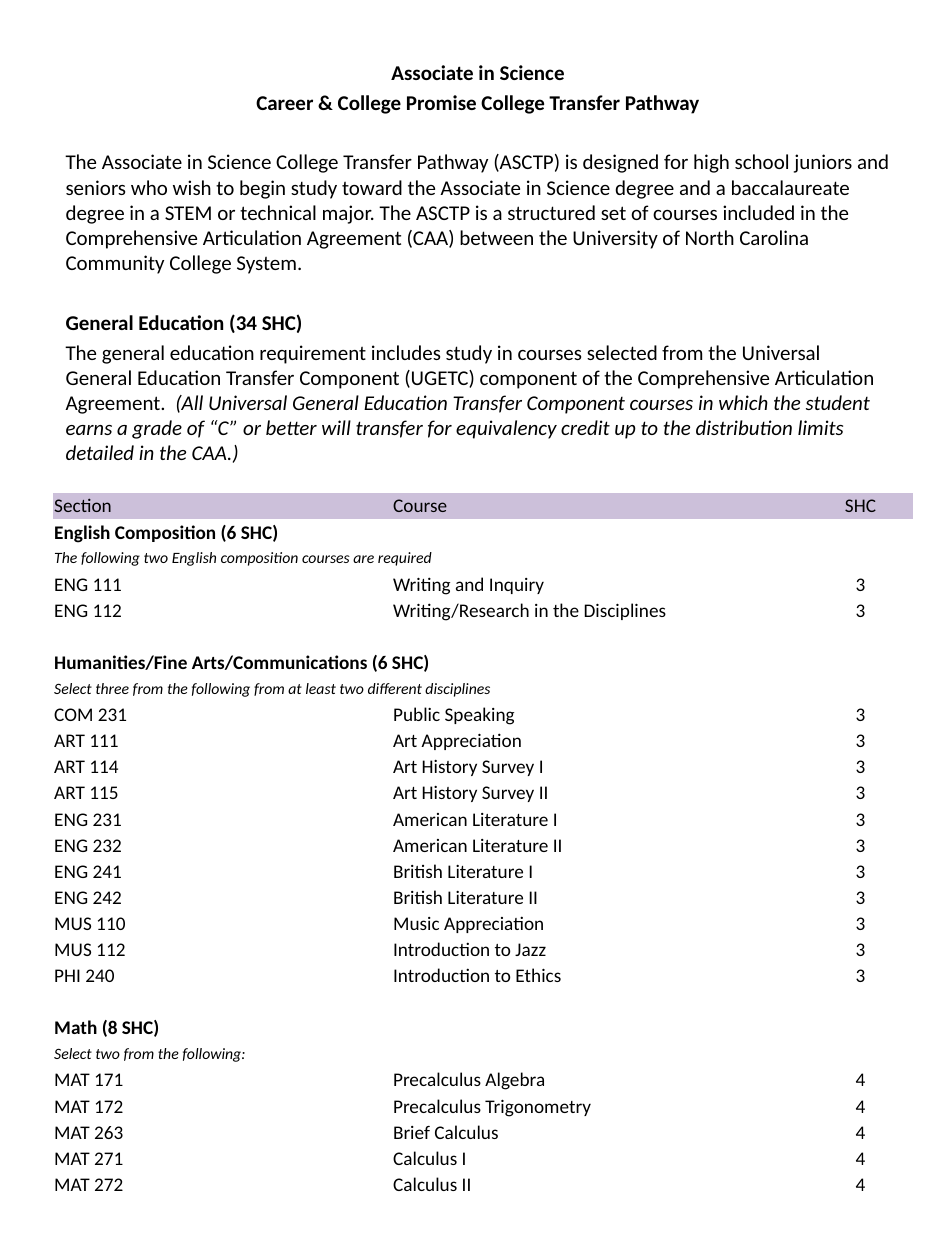
"""Build the Associate in Science pathway sheet."""
import dataclasses

import pptx
import pptx.dml.color
import pptx.enum.text
import pptx.oxml
import pptx.oxml.ns
import pptx.table
import pptx.util

ALIGN = pptx.enum.text.PP_ALIGN
WIDE, HIGH = 7.5, 10
LEFT = 0.056 * WIDE
COLS = (2.69, 3.3, 0.84)
TABLE_TOP, TABLE_HIGH = 0.391 * HIGH, 0.56 * HIGH
NO_GRID = "{2D5ABB26-0587-4C30-8999-92F81FD0307C}"
NEAR, FAR = 2.8, 19.6


@dataclasses.dataclass
class Para:
    """A paragraph of the introduction."""

    text: str
    bold: bool = False
    mid: bool = False
    gap: float = NEAR
    tail: str = ""


@dataclasses.dataclass
class Group:
    """A section of the course table."""

    name: str
    rule: str
    hours: str
    spans: tuple[int, int]
    items: list[tuple[str, str]]


INTRO = [
    Para("Associate in Science", bold=True, mid=True),
    Para("Career & College Promise College Transfer Pathway", bold=True, mid=True),
    Para("The Associate in Science College Transfer Pathway (ASCTP) is designed for high school "
         "juniors and seniors who wish to begin study toward the Associate in Science degree and a "
         "baccalaureate degree in a STEM or technical major. The ASCTP is a structured set of "
         "courses included in the Comprehensive Articulation Agreement (CAA) between the "
         "University of North Carolina Community College System.", gap=FAR),
    Para("General Education (34 SHC)", bold=True, gap=FAR),
    Para("The general education requirement includes study in courses selected from the Universal "
         "General Education Transfer Component (UGETC) component of the Comprehensive "
         "Articulation Agreement. ",
         tail=" (All Universal General Education Transfer Component courses in which the student "
         "earns a grade of “C” or better will transfer for equivalency credit up to the "
         "distribution limits detailed in the CAA.)"),
]

GROUPS = [
    Group("English Composition (6 SHC)",
          "The following two English composition courses are required", "3", (3, 3), [
              ("ENG 111", "Writing and Inquiry"),
              ("ENG 112", "Writing/Research in the Disciplines")]),
    Group("Humanities/Fine Arts/Communications (6 SHC)",
          "Select three from the following from at least two different disciplines", "3", (3, 2), [
              ("COM 231", "Public Speaking"),
              ("ART 111", "Art Appreciation"),
              ("ART 114", "Art History Survey I"),
              ("ART 115", "Art History Survey II"),
              ("ENG 231", "American Literature I"),
              ("ENG 232", "American Literature II"),
              ("ENG 241", "British Literature I"),
              ("ENG 242", "British Literature II"),
              ("MUS 110", "Music Appreciation"),
              ("MUS 112", "Introduction to Jazz"),
              ("PHI 240", "Introduction to Ethics")]),
    Group("Math (8 SHC)", "Select two from the following:", "4", (1, 1), [
        ("MAT 171", "Precalculus Algebra"),
        ("MAT 172", "Precalculus Trigonometry"),
        ("MAT 263", "Brief Calculus"),
        ("MAT 271", "Calculus I"),
        ("MAT 272", "Calculus II")]),
]


@dataclasses.dataclass
class Row:
    """One row of the table and how it looks."""

    texts: tuple[str, str, str]
    size: int = 11
    bold: bool = False
    slant: bool = False
    span: int = 1
    fill: str = ""


def color(code: str) -> pptx.dml.color.RGBColor:
    """Turn a hex string into a colour."""
    return pptx.dml.color.RGBColor.from_string(code)


def style(run, size: int, bold: bool = False, slant: bool = False) -> None:
    """Format a run."""
    font = run.font
    font.name, font.size = "Calibri", pptx.util.Pt(size)
    font.bold, font.italic = bold, slant
    font.color.rgb = color("000000")


def draw_intro(body, paras: list[Para]) -> None:
    """Place the body placeholder and write the introduction."""
    body.left, body.top = pptx.util.Inches(LEFT), pptx.util.Inches(0.042 * HIGH)
    body.width, body.height = pptx.util.Inches(0.9 * WIDE), pptx.util.Inches(0.35 * HIGH)
    frame = body.text_frame
    frame.word_wrap = True
    frame.auto_size = pptx.enum.text.MSO_AUTO_SIZE.NONE
    frame.text = "\n".join(para.text for para in paras)
    for para, line in zip(paras, frame.paragraphs):
        line.alignment = ALIGN.CENTER if para.mid else ALIGN.LEFT
        line.space_before = pptx.util.Pt(para.gap)
        props = line._p.get_or_add_pPr()
        props.set("marL", "0")
        props.set("indent", "0")
        props.append(pptx.oxml.parse_xml(f"<a:buNone {pptx.oxml.ns.nsdecls('a')}/>"))
        style(line.runs[0], 12, bold=para.bold)
        if para.tail:
            run = line.add_run()
            run.text = para.tail
            style(run, 12, slant=True)


def list_rows(groups: list[Group]) -> list[Row]:
    """Lay the sections out as rows, with a blank row between sections."""
    rows = [Row(("Section", "Course", "SHC"), fill="CCC0DA")]
    for group in groups:
        if group is not groups[0]:
            rows.append(Row(("", "", "")))
        rows.append(Row((group.name, "", ""), bold=True, span=group.spans[0]))
        rows.append(Row((group.rule, "", ""), size=9, slant=True, span=group.spans[1]))
        rows.extend(Row((code, name, group.hours)) for code, name in group.items)
    return rows


def draw_cell(cell: pptx.table._Cell, row: Row, col: int) -> None:
    """Write and format one cell."""
    cell.margin_left = cell.margin_right = cell.margin_top = pptx.util.Inches(0.01)
    cell.margin_bottom = 0
    cell.vertical_anchor = pptx.enum.text.MSO_ANCHOR.MIDDLE
    if row.fill:
        cell.fill.solid()
        cell.fill.fore_color.rgb = color(row.fill)
    else:
        cell.fill.background()
    line = cell.text_frame.paragraphs[0]
    line.alignment = ALIGN.CENTER if col == 2 else ALIGN.LEFT
    if row.texts[col]:
        line.text = row.texts[col]
        style(line.runs[0], row.size, row.bold, row.slant)
    else:
        line._p.get_or_add_endParaRPr().set("sz", str(row.size * 100))


def draw_table(slide, rows: list[Row]) -> None:
    """Add the course table."""
    place = map(pptx.util.Inches, (LEFT, TABLE_TOP, sum(COLS), TABLE_HIGH))
    table = slide.shapes.add_table(len(rows), len(COLS), *place).table
    table.first_row = table.horz_banding = False
    table._tbl.tblPr.find(pptx.oxml.ns.qn("a:tableStyleId")).text = NO_GRID
    for col, width in zip(table.columns, COLS):
        col.width = pptx.util.Inches(width)
    for num, row in enumerate(rows):
        table.rows[num].height = pptx.util.Inches(TABLE_HIGH / len(rows))
        for col in range(len(COLS)):
            draw_cell(table.cell(num, col), row, col)
        if row.span > 1:
            table.cell(num, 0).merge(table.cell(num, row.span - 1))


def main() -> None:
    """Build and save the slide."""
    deck = pptx.Presentation()
    deck.slide_width, deck.slide_height = pptx.util.Inches(WIDE), pptx.util.Inches(HIGH)
    slide = deck.slides.add_slide(deck.slide_layouts[1])
    title = slide.shapes.title._element
    title.getparent().remove(title)
    draw_intro(slide.placeholders[1], INTRO)
    draw_table(slide, list_rows(GROUPS))
    deck.save("out.pptx")


if __name__ == "__main__":
    main()
